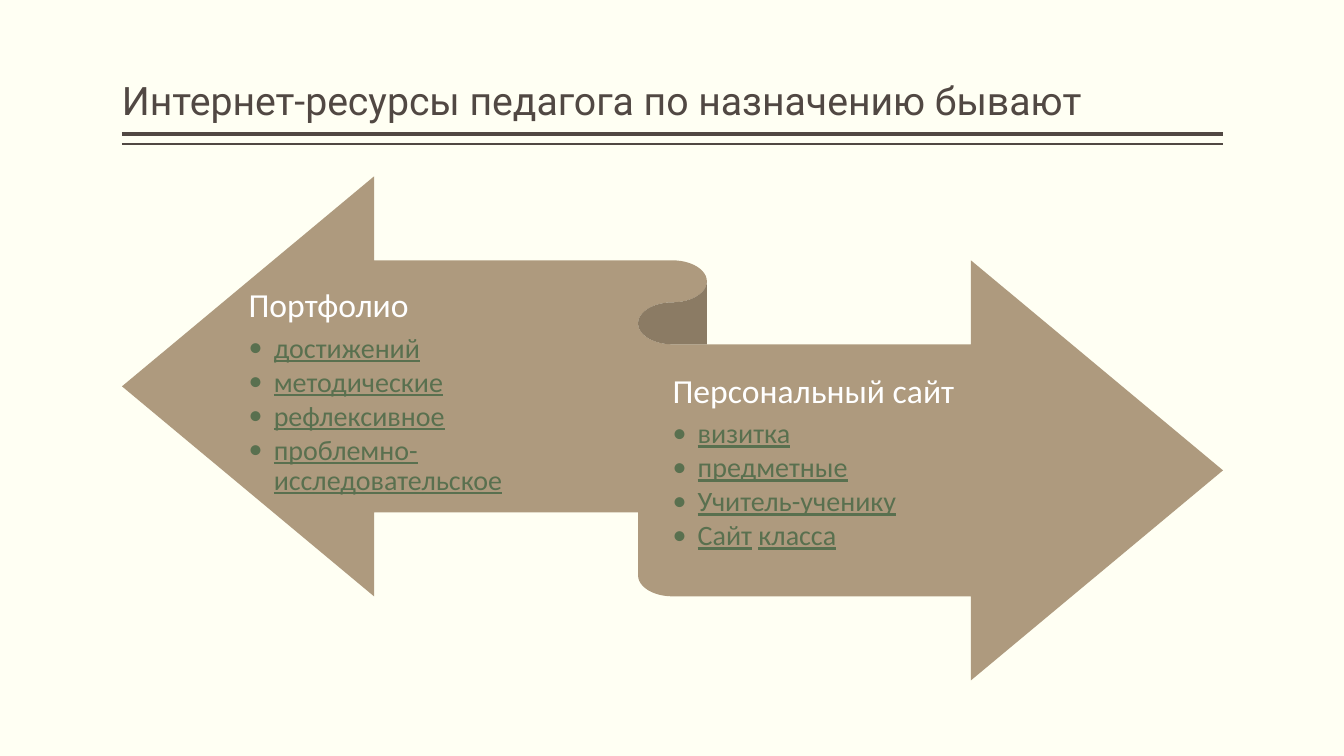
from lxml import etree
from pptx import Presentation
from pptx import util as u
from pptx.dml.color import RGBColor
from pptx.enum import shapes, text
from pptx.oxml.ns import qn

TITLE = "Интернет-ресурсы педагога по назначению бывают"
BACK, DARK, RIBBON, LINK, WHITE = "FFFFF3", "514843", "AE9A7E", "59704F", "FFFFFF"
# heading, items (each a list of linked words)
PORTFOLIO = ("Портфолио", [["достижений"], ["методические"], ["рефлексивное"],
                           ["проблемно-исследовательское"]])
SITE = ("Персональный сайт", [["визитка"], ["предметные"], ["Учитель-ученику"],
                              ["Сайт", "класса"]])

W, H = 13.33, 7.5
LEFT, WIDE = 1.21, 10.92
RIBBON_TOP, RIBBON_H = 1.75, 5
RULES = [(1.33, 3), (1.43, 1)]  # top, line width
# Each side's box as shares of the ribbon: left, top, width
SIDES = [(PORTFOLIO, 0.115, 0.216, 0.357), (SITE, 0.5, 0.356, 0.39)]
SIDE_H = 0.428
INDENT = 0.25


def rgb(value):
    return RGBColor.from_string(value)


def box(*lengths):
    return [u.Inches(n) for n in lengths]


def add_run(p, content, size, color, font="Calibri", underline=False):
    r = p.add_run()
    r.text = content
    f = r.font
    f.size, f.name, f.underline, f.bold = u.Pt(size), font, underline, False
    f.color.rgb = rgb(color)


def set_frame(tf, anchor, top, bottom):
    tf.word_wrap = True
    tf.auto_size = text.MSO_AUTO_SIZE.NONE
    tf.vertical_anchor = anchor
    tf.margin_left = tf.margin_right = 0
    tf.margin_top, tf.margin_bottom = box(top, bottom)


def set_paragraph(p, after=0):
    p.alignment = text.PP_ALIGN.LEFT
    p.line_spacing = 0.9
    p.space_before, p.space_after = u.Pt(0), u.Pt(after)


def add_bullet(p):
    pr = p._p.get_or_add_pPr()
    pr.set("marL", str(u.Inches(INDENT)))
    pr.set("indent", str(-u.Inches(INDENT)))
    etree.SubElement(pr, qn("a:buFont")).set("typeface", "Calibri")
    etree.SubElement(pr, qn("a:buChar")).set("char", "•")


def add_rule(slide, top, width):
    line = slide.shapes.add_connector(
        shapes.MSO_CONNECTOR.STRAIGHT, *box(LEFT, top, LEFT + WIDE, top))
    line.line.color.rgb = rgb(DARK)
    line.line.width = u.Pt(width)
    etree.SubElement(line._element.spPr, qn("a:effectLst"))


def add_side(slide, content, left, top, width):
    heading, items = content
    sp = slide.shapes.add_textbox(*box(
        LEFT + left * WIDE, RIBBON_TOP + top * RIBBON_H,
        width * WIDE, SIDE_H * RIBBON_H))
    tf = sp.text_frame
    set_frame(tf, text.MSO_ANCHOR.MIDDLE, 0.09, 0.1)
    p = tf.paragraphs[0]
    set_paragraph(p, after=6.3)
    add_run(p, heading, 24, WHITE)
    for words in items:
        p = tf.add_paragraph()
        p.level = 1
        set_paragraph(p, after=2.7)
        add_bullet(p)
        for i, word in enumerate(words):
            if i:
                add_run(p, " ", 20, WHITE)
            add_run(p, word, 20, LINK, underline=True)


def main():
    prs = Presentation()
    prs.slide_width, prs.slide_height = box(W, H)
    slide = prs.slides.add_slide(prs.slide_layouts[5])
    slide.background.fill.solid()
    slide.background.fill.fore_color.rgb = rgb(BACK)

    for top, width in RULES:
        add_rule(slide, top, width)

    title = slide.shapes.title
    title.left, title.top, title.width, title.height = box(LEFT, 0.08, WIDE, 1.2)
    set_frame(title.text_frame, text.MSO_ANCHOR.BOTTOM, 0.05, 0.05)
    p = title.text_frame.paragraphs[0]
    set_paragraph(p)
    add_run(p, TITLE, 28, DARK, font="Roboto")

    ribbon = slide.shapes.add_shape(
        shapes.MSO_SHAPE.LEFT_RIGHT_RIBBON, *box(LEFT, RIBBON_TOP, WIDE, RIBBON_H))
    ribbon.shadow.inherit = False
    ribbon.fill.solid()
    ribbon.fill.fore_color.rgb = rgb(RIBBON)
    ribbon.line.fill.background()

    for side in SIDES:
        add_side(slide, *side)
    prs.save("out.pptx")


if __name__ == "__main__":
    main()
